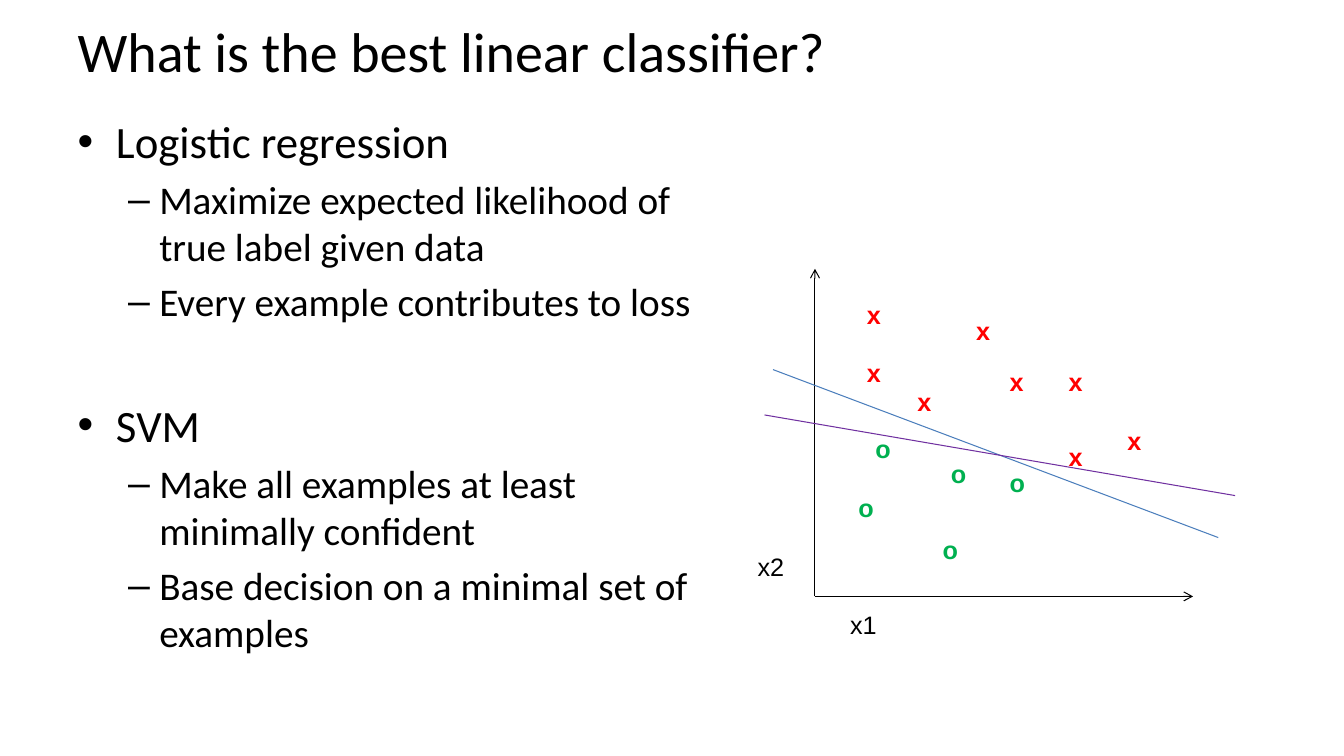
from pptx import Presentation
from pptx.dml.color import RGBColor
from pptx.enum.shapes import MSO_CONNECTOR
from pptx.enum.text import MSO_ANCHOR, MSO_AUTO_SIZE, PP_ALIGN
from pptx.oxml.ns import qn
from pptx.util import Inches, Pt
from lxml.etree import SubElement

# Content
HEADING = "What is the best linear classifier?"
METHODS = [
    ("Logistic regression", [
        "Maximize expected likelihood of true label given data",
        "Every example contributes to loss",
    ]),
    ("SVM", [
        "Make all examples at least minimally confident",
        "Base decision on a minimal set of examples",
    ]),
]

# Plot positions: columns and rows of a grid, twelve to the inch
CELL = 1 / 12
ORIGIN = (97, 71)
AXIS_ENDS = [(97, 32), (142, 71)]
AXIS_LABELS = {"x2": (89, 65), "x1": (100, 72)}
CLASSES = {
    "x": ("FF0000", [(119, 43), (126, 43), (126, 52), (133, 50),
                     (102, 35), (102, 42), (115, 37), (108, 45.4)]),
    "o": ("00B050", [(119, 55), (101, 58), (103, 51), (111, 63), (112, 54)]),
}
BOUNDARIES = [("4B7EBC", (92, 44), (145, 64)),
              ("7030A0", (91, 49.4), (147, 59))]

# Text size, left margin and hanging indent for each list level
LEVELS = [(32, 0.38, -0.38), (28, 0.81, -0.31)]
BOX_WIDTHS = {"x": 0.34, "o": 0.36, "x1": 0.47, "x2": 0.47}


def color(hex_string):
    return RGBColor.from_string(hex_string)


def grid(cells):
    return Inches(cells * CELL)


def style(paragraph, size, font, hex_string, bold=False):
    for run in paragraph.runs:
        run.font.size = Pt(size)
        run.font.name = font
        run.font.bold = bold
        run.font.color.rgb = color(hex_string)


def place(shape, left, top, width, height):
    shape.left, shape.top = Inches(left), Inches(top)
    shape.width, shape.height = Inches(width), Inches(height)


def add_label(slide, text, position, hex_string, bold=False):
    column, row = position
    label = slide.shapes.add_textbox(grid(column), grid(row),
                                     Inches(BOX_WIDTHS[text]), Inches(0.4))
    frame = label.text_frame
    frame.word_wrap = False
    frame.auto_size = MSO_AUTO_SIZE.SHAPE_TO_FIT_TEXT
    frame.text = text
    style(frame.paragraphs[0], 18, "Arial", hex_string, bold)


def add_line(slide, start, end, hex_string, arrow=False):
    line = slide.shapes.add_connector(
        MSO_CONNECTOR.STRAIGHT, *(grid(cells) for cells in start + end))
    line.line.color.rgb = color(hex_string)
    line.line.width = Pt(0.75)
    if arrow:
        SubElement(line.line._get_or_add_ln(), qn("a:tailEnd"), type="arrow")
    SubElement(line._element.spPr, qn("a:effectLst"))


def add_method_line(frame, text, level, gap):
    first = frame.paragraphs[0]
    paragraph = frame.add_paragraph() if first.text else first
    paragraph.text = text
    paragraph.level = level
    size, margin, indent = LEVELS[level]
    style(paragraph, size, "Calibri", "000000")
    paragraph.space_before = Pt(gap)
    properties = paragraph._p.get_or_add_pPr()
    properties.set("marL", str(Inches(margin)))
    properties.set("indent", str(Inches(indent)))


def main():
    deck = Presentation()
    deck.slide_width, deck.slide_height = Inches(13.33), Inches(7.5)
    slide = deck.slides.add_slide(deck.slide_layouts[1])

    # Title
    title = slide.shapes.title
    place(title, 0.67, 0, 12, 1)
    title.text_frame.text = HEADING
    title.text_frame.auto_size = MSO_AUTO_SIZE.NONE
    title.text_frame.vertical_anchor = MSO_ANCHOR.MIDDLE
    title.text_frame.paragraphs[0].alignment = PP_ALIGN.LEFT
    style(title.text_frame.paragraphs[0], 40, "Calibri", "000000")

    # Methods, with a wider gap before the second one
    body = slide.placeholders[1]
    place(body, 0.67, 1.08, 6.66, 5.62)
    body.text_frame.auto_size = MSO_AUTO_SIZE.NONE
    for number, (method, traits) in enumerate(METHODS):
        add_method_line(body.text_frame, method, 0, 52 if number else 6.4)
        for trait in traits:
            add_method_line(body.text_frame, trait, 1, 5.6)

    # Examples of both classes
    for mark, (hex_string, positions) in CLASSES.items():
        for position in positions:
            add_label(slide, mark, position, hex_string, bold=True)

    # Axes
    for end in AXIS_ENDS:
        add_line(slide, ORIGIN, end, "000000", arrow=True)
    for name, position in AXIS_LABELS.items():
        add_label(slide, name, position, "000000")

    # Decision boundaries
    for hex_string, start, end in BOUNDARIES:
        add_line(slide, start, end, hex_string)

    deck.save("out.pptx")


if __name__ == "__main__":
    main()
